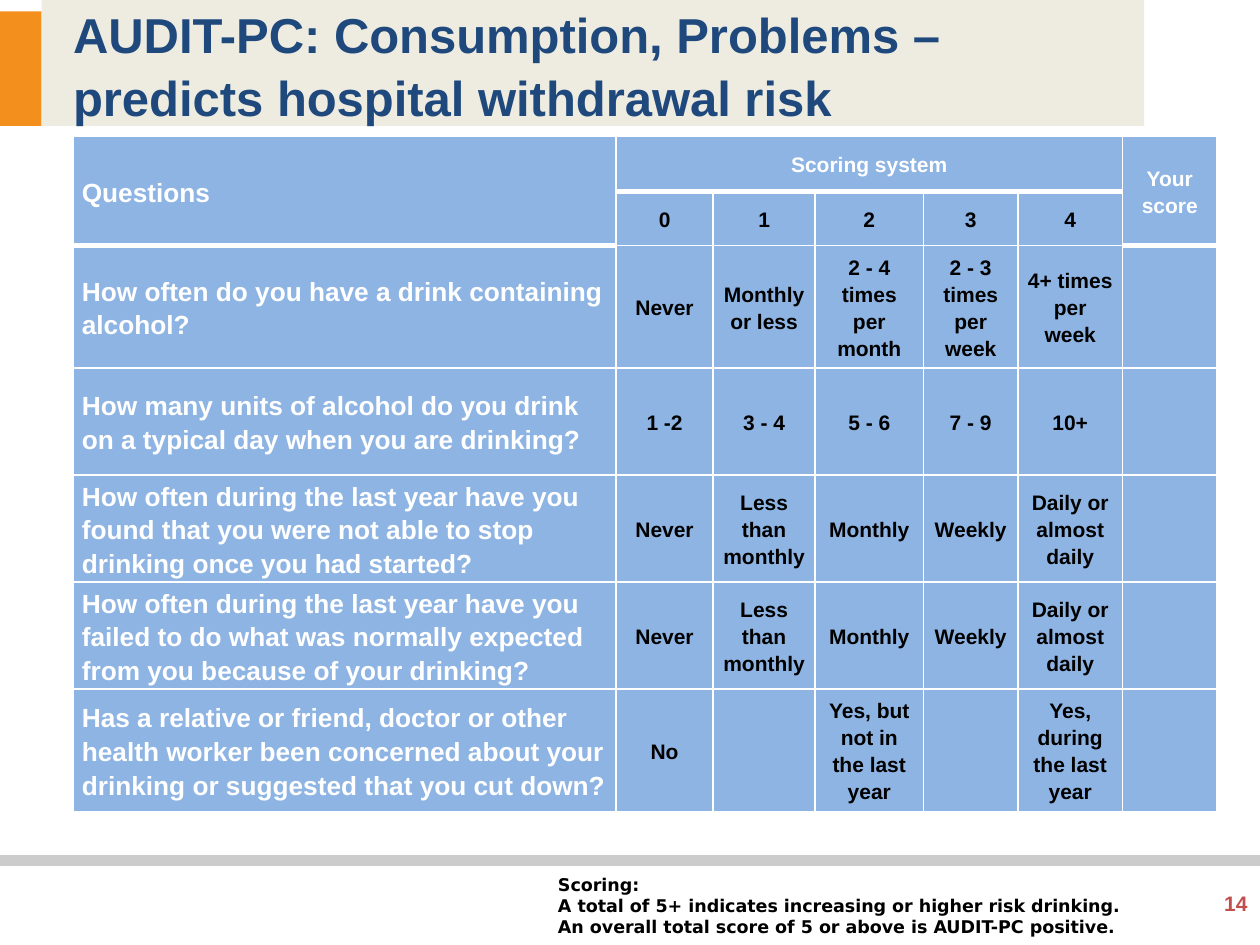
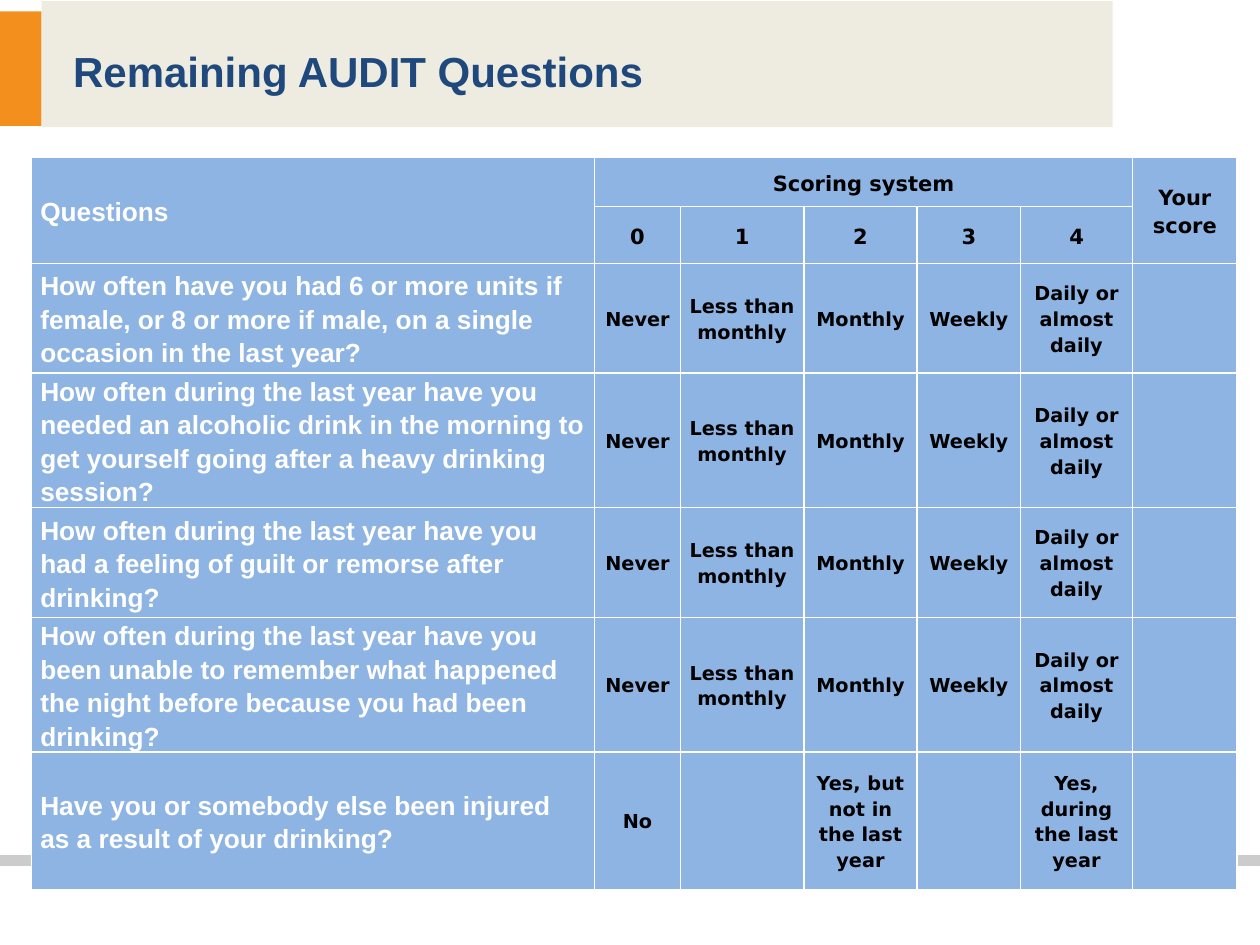
"""Build two slides of alcohol screening questions with their scoring tables."""
from dataclasses import dataclass

from lxml.etree import SubElement
from pptx import Presentation
from pptx.dml.color import RGBColor
from pptx.enum.shapes import MSO_CONNECTOR, MSO_SHAPE
from pptx.enum.text import MSO_ANCHOR as Anchor, MSO_AUTO_SIZE as AutoSize, PP_ALIGN as Align
from pptx.oxml.ns import qn
from pptx.util import Inches, Pt

NAVY = RGBColor(0x1F, 0x49, 0x7D)
BEIGE = RGBColor(0xEE, 0xEC, 0xE1)
ORANGE = RGBColor(0xF3, 0x90, 0x1D)
GREY = RGBColor(0xCC, 0xCC, 0xCC)
BLUE = RGBColor(0x8E, 0xB4, 0xE3)
RED = RGBColor(0xC0, 0x50, 0x4D)
WHITE = RGBColor(0xFF, 0xFF, 0xFF)
BLACK = RGBColor(0, 0, 0)

SANS = "Arial"
WIDE_SANS = "DejaVu Sans"
LAST_COLUMN = 6
HEADER = [
    ("Questions", "Scoring system", "", "", "", "", "Your score"),
    ("", "0", "1", "2", "3", "4", ""),
]
FREQUENCIES = ("Never", "Less than monthly", "Monthly", "Weekly", "Daily or almost daily")
YES_OR_NO = ("No", "", "Yes, but not in the last year", "", "Yes, during the last year")


@dataclass(frozen=True)
class TextStyle:
    size: float
    color: RGBColor = BLACK
    font: str = SANS
    align: Align = Align.LEFT
    spacing: object = None


@dataclass(frozen=True)
class Area:
    left: float
    top: float
    width: float
    height: float

    def inches(self) -> tuple:
        return tuple(map(Inches, (self.left, self.top, self.width, self.height)))


@dataclass(frozen=True)
class Questionnaire:
    title: str
    title_area: Area
    title_size: float
    left: float
    top: float
    columns: tuple
    rows: tuple
    questions: list
    heading: TextStyle
    score: TextStyle
    answer: TextStyle
    header_rule: float


def centred(size: float, color: RGBColor, font: str) -> TextStyle:
    return TextStyle(size, color, font, Align.CENTER, 1.15)


QUESTION = TextStyle(15, WHITE, spacing=1.15)
WIDE_HEADING = centred(12, BLACK, WIDE_SANS)

AUDIT_PC = Questionnaire(
    title="AUDIT-PC: Consumption, Problems – predicts hospital withdrawal risk",
    title_area=Area(0.33, 0, 8.75, 1),
    title_size=28,
    left=0.58,
    top=1.08,
    columns=(4.31, 0.77, 0.81, 0.86, 0.75, 0.83, 0.75),
    rows=(0.44, 0.41, 0.97, 0.85, 0.85, 0.85, 0.97),
    questions=[
        ("How often do you have a drink containing alcohol?",
         "Never", "Monthly\nor less", "2 - 4 times per month",
         "2 - 3 times per week", "4+ times per week"),
        ("How many units of alcohol do you drink on a typical day when you are drinking?",
         "1 -2", "3 - 4", "5 - 6", "7 - 9", "10+"),
        ("How often during the last year have you found that you were not able to stop "
         "drinking once you had started?", *FREQUENCIES),
        ("How often during the last year have you failed to do what was normally expected "
         "from you because of your drinking?", *FREQUENCIES),
        ("Has a relative or friend, doctor or other health worker been concerned about your "
         "drinking or suggested that you cut down?", *YES_OR_NO),
    ],
    heading=centred(12, WHITE, SANS),
    score=centred(12, BLACK, SANS),
    answer=centred(12, BLACK, SANS),
    header_rule=3,
)

REMAINING = Questionnaire(
    title="Remaining AUDIT Questions",
    title_area=Area(0.33, 0.01, 8.5, 1),
    title_size=24,
    left=0.25,
    top=1.25,
    columns=(4.47, 0.68, 0.98, 0.9, 0.82, 0.89, 0.83),
    rows=(0.39, 0.45, 0.87, 1.07, 0.87, 1.07, 1.09),
    questions=[
        ("How often have you had 6 or more units if female, or 8 or more if male, "
         "on a single occasion in the last year?", *FREQUENCIES),
        ("How often during the last year have you needed an alcoholic drink in the morning "
         "to get yourself going after a heavy drinking session?", *FREQUENCIES),
        ("How often during the last year have you had a feeling of guilt or remorse after "
         "drinking?", *FREQUENCIES),
        ("How often during the last year have you been unable to remember what happened "
         "the night before because you had been drinking?", *FREQUENCIES),
        ("Have you or somebody else been injured as a result of your drinking?", *YES_OR_NO),
    ],
    heading=WIDE_HEADING,
    score=WIDE_HEADING,
    answer=centred(11, BLACK, WIDE_SANS),
    header_rule=1,
)


def write(frame, text: str, style: TextStyle) -> None:
    frame.text = text
    frame.word_wrap = True
    for para in frame.paragraphs:
        para.alignment = style.align
        para.line_spacing = style.spacing
        for span in para.runs:
            span.font.name = style.font
            span.font.size = Pt(style.size)
            span.font.bold = True
            span.font.color.rgb = style.color


def add_note(page, area: Area, text: str, style: TextStyle, anchor: Anchor) -> None:
    frame = page.shapes.add_textbox(*area.inches()).text_frame
    frame.vertical_anchor = anchor
    write(frame, text, style)


def add_frame(page, sheet: Questionnaire) -> None:
    rule = page.shapes.add_connector(
        MSO_CONNECTOR.STRAIGHT, 0, Inches(6.83), Inches(10), Inches(6.83))
    rule.line.color.rgb = GREY
    rule.line.width = Pt(6)
    SubElement(rule._element.spPr, qn("a:effectLst"))

    bar = page.shapes.add_shape(MSO_SHAPE.RECTANGLE, *Area(0, 0.09, 0.33, 0.91).inches())
    bar.shadow.inherit = False
    bar.fill.solid()
    bar.fill.fore_color.rgb = ORANGE
    bar.line.fill.background()

    title = page.shapes.title
    title.left, title.top, title.width, title.height = sheet.title_area.inches()
    title.fill.solid()
    title.fill.fore_color.rgb = BEIGE
    frame = title.text_frame
    frame.auto_size = AutoSize.NONE
    frame.vertical_anchor = Anchor.MIDDLE
    frame.margin_left = Inches(0.25)
    write(frame, sheet.title, TextStyle(sheet.title_size, NAVY, spacing=Pt(36)))


def set_borders(cell, widths: dict) -> None:
    properties = cell._tc.get_or_add_tcPr()
    for side, width in widths.items():
        line = SubElement(properties, qn(f"a:ln{side}"), w=str(Pt(width)))
        fill = SubElement(line, qn("a:solidFill"))
        SubElement(fill, qn("a:srgbClr"), val=str(WHITE))


def closes_header(row: int, column: int) -> bool:
    return row == (1 if column in (0, LAST_COLUMN) else 0)


def cell_style(sheet: Questionnaire, row: int, column: int) -> TextStyle:
    if column == 0:
        return QUESTION
    return (sheet.heading, sheet.score)[row] if row < 2 else sheet.answer


def add_questions(page, sheet: Questionnaire) -> None:
    content = HEADER + [(*question, "") for question in sheet.questions]
    area = Area(sheet.left, sheet.top, sum(sheet.columns), sum(sheet.rows))
    table = page.shapes.add_table(
        len(sheet.rows), len(sheet.columns), *area.inches()).table
    for column, width in zip(table.columns, sheet.columns):
        column.width = Inches(width)
    for row, height in zip(table.rows, sheet.rows):
        row.height = Inches(height)

    for column in (0, LAST_COLUMN):
        table.cell(0, column).merge(table.cell(1, column))
    table.cell(0, 1).merge(table.cell(0, LAST_COLUMN - 1))

    for row, texts in enumerate(content):
        for column, text in enumerate(texts):
            cell = table.cell(row, column)
            cell.margin_left = cell.margin_right = Inches(0.07)
            cell.margin_top = cell.margin_bottom = 0
            cell.vertical_anchor = Anchor.MIDDLE
            ends = closes_header(row, column) or (cell.is_merge_origin and row == 0)
            below = closes_header(row - 1, column)
            set_borders(cell, {
                "L": 1,
                "R": 1,
                "T": sheet.header_rule if below else 1,
                "B": sheet.header_rule if ends else 1,
            })
            cell.fill.solid()
            cell.fill.fore_color.rgb = BLUE
            if text:
                write(cell.text_frame, text, cell_style(sheet, row, column))


def add_page(deck, sheet: Questionnaire):
    page = deck.slides.add_slide(deck.slide_layouts[5])
    add_frame(page, sheet)
    add_questions(page, sheet)
    return page


def main() -> None:
    deck = Presentation()
    deck.slide_width, deck.slide_height = Inches(10), Inches(7.5)
    page = add_page(deck, AUDIT_PC)
    add_note(page, Area(9.33, 7, 0.67, 0.33), "14",
             TextStyle(12, RED, align=Align.RIGHT), Anchor.MIDDLE)
    add_note(page, Area(4.33, 6.72, 4.75, 0.77),
             "Scoring:\nA total of 5+ indicates increasing or higher risk drinking.\n"
             "An overall total score of 5 or above is AUDIT-PC positive.",
             TextStyle(10, font=WIDE_SANS), Anchor.BOTTOM)
    add_page(deck, REMAINING)
    deck.save("out.pptx")


if __name__ == "__main__":
    main()
